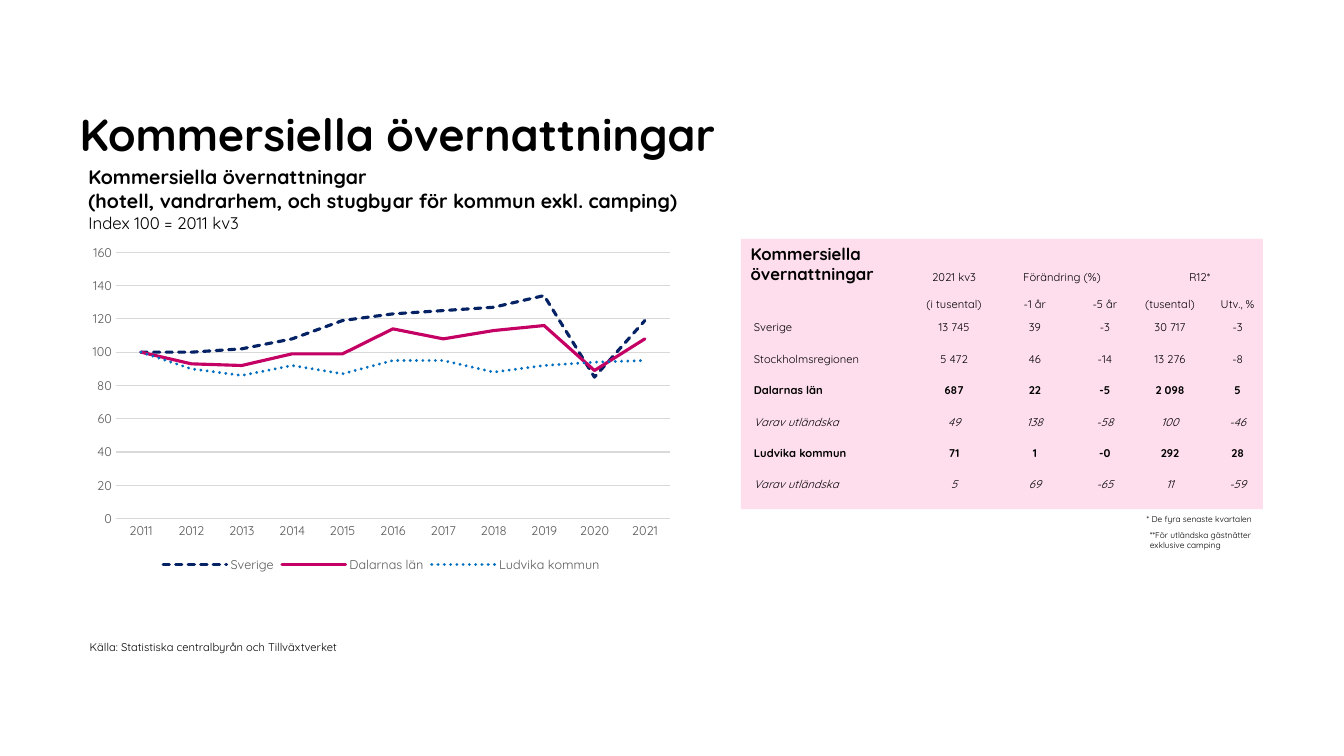
import dataclasses
import typing

import lxml.etree
import pptx
import pptx.chart.data
import pptx.dml.color
import pptx.enum.chart
import pptx.enum.dml
import pptx.enum.shapes
import pptx.enum.text
import pptx.oxml.ns
import pptx.util

Cm = pptx.util.Cm
Pt = pptx.util.Pt
Anchor = pptx.enum.text.MSO_ANCHOR
Align = pptx.enum.text.PP_ALIGN
Dash = pptx.enum.dml.MSO_LINE
Tick = pptx.enum.chart.XL_TICK_MARK


@dataclasses.dataclass(frozen=True)
class Theme:
    face: str = "Quicksand"
    ink: str = "000000"
    gray: str = "595959"
    grid: str = "D9D9D9"
    pink: str = "FEDEED"
    navy: str = "052364"
    red: str = "C40064"
    blue: str = "006EBF"
    title: int = 32
    head: int = 14
    sub: int = 12
    axis: int = 9
    body: int = 8
    note: int = 6


THEME = Theme()


class Line(typing.NamedTuple):
    text: str
    size: int
    bold: bool = False


class Box(typing.NamedTuple):
    left: float
    top: float
    width: float
    height: float
    lines: list[Line]
    inset: bool = True
    anchor: Anchor = Anchor.TOP


class Row(typing.NamedTuple):
    cells: list[str]
    bold: bool = False
    slant: bool = False


class Trend(typing.NamedTuple):
    name: str
    color: str
    dash: Dash
    values: list[int]


BOXES = [
    Box(2.01, 0.94, 23.42, 3.1, [Line("Kommersiella övernattningar", THEME.title, True)],
        False, Anchor.BOTTOM),
    Box(1.98, 4.04, 16.13, 1.96, [
        Line("Kommersiella övernattningar", THEME.head, True),
        Line("(hotell, vandrarhem, och stugbyar för kommun exkl. camping)", THEME.head, True),
        Line("Index 100 = 2011 kv3", THEME.sub)]),
    Box(18.67, 6.02, 6.1, 0.76, [Line("Kommersiella\vövernattningar", THEME.sub, True)]),
    Box(28.65, 12.83, 3.28, 0.51, [Line("* De fyra senaste kvartalen", THEME.note)]),
    Box(28.73, 13.23, 3.15, 0.76,
        [Line("**För utländska gästnätter exklusive camping", THEME.note)]),
    Box(2.01, 16, 7.04, 0.61,
        [Line("Källa: Statistiska centralbyrån och Tillväxtverket", THEME.body)]),
]

HEADS = 2
WIDTHS = [4.29, 1.91, 2.16, 1.37, 1.91, 1.5]
HEIGHTS = [0.66, 0.69] + [0.79] * 6
ROWS = [
    Row(["", "2021 kv3", "Förändring (%)", "", "R12*", ""]),
    Row(["", "(i tusental)", "-1 år", "-5 år", "(tusental)", "Utv., %"]),
    Row(["Sverige", "13 745", "39", "-3", "30 717", "-3"]),
    Row(["Stockholmsregionen", "5 472", "46", "-14", "13 276", "-8"]),
    Row(["Dalarnas län", "687", "22", "-5", "2 098", "5"], bold=True),
    Row(["Varav utländska", "49", "138", "-58", "100", "-46"], slant=True),
    Row(["Ludvika kommun", "71", "1", "-0", "292", "28"], bold=True),
    Row(["Varav utländska", "5", "69", "-65", "11", "-59"], slant=True),
]

TRENDS = [
    Trend("Sverige", THEME.navy, Dash.SQUARE_DOT,
          [100, 100, 102, 108, 119, 123, 125, 127, 134, 85, 119]),
    Trend("Dalarnas län", THEME.red, Dash.SOLID,
          [100, 93, 92, 99, 99, 114, 108, 113, 116, 89, 108]),
    Trend("Ludvika kommun", THEME.blue, Dash.ROUND_DOT,
          [100, 90, 86, 92, 87, 95, 95, 88, 92, 94, 95]),
]


def style(font, size: int, color: str = THEME.ink, bold: bool = False,
          slant: bool = False) -> None:
    font.name, font.size = THEME.face, Pt(size)
    font.bold, font.italic = bold, slant
    font.color.rgb = pptx.dml.color.RGBColor.from_string(color)


def stroke(line, color: str, width: float) -> None:
    line.color.rgb = pptx.dml.color.RGBColor.from_string(color)
    line.width = Pt(width)


def add_box(slide, box: Box) -> None:
    shape = slide.shapes.add_textbox(*map(Cm, box[:4]))
    frame = shape.text_frame
    frame.word_wrap = True
    frame.vertical_anchor = box.anchor
    if not box.inset:
        frame.margin_left = frame.margin_right = frame.margin_top = frame.margin_bottom = 0
    frame.text = "\n".join(line.text for line in box.lines)
    for part, line in zip(frame.paragraphs, box.lines):
        for run in part.runs:
            style(run.font, line.size, bold=line.bold)


def add_panel(slide) -> None:
    panel = slide.shapes.add_shape(pptx.enum.shapes.MSO_SHAPE.RECTANGLE,
                                   Cm(18.67), Cm(6.02), Cm(13.16), Cm(6.81))
    panel.shadow.inherit = False
    panel.fill.solid()
    panel.fill.fore_color.rgb = pptx.dml.color.RGBColor.from_string(THEME.pink)
    panel.line.fill.background()


def fill_cell(cell, text: str, row: Row, label: bool, head: bool) -> None:
    cell.fill.background()
    cell.margin_left = Cm(0.2 if label else 0.03)
    cell.margin_right = cell.margin_top = Cm(0.03)
    cell.margin_bottom = 0
    cell.vertical_anchor = Anchor.BOTTOM if head else Anchor.MIDDLE
    cell.text_frame.text = text
    part = cell.text_frame.paragraphs[0]
    part.alignment = Align.LEFT if label else Align.CENTER
    for run in part.runs:
        style(run.font, THEME.body, bold=row.bold, slant=row.slant)
    if not text:  # keeps blank cells from stretching the row
        end = lxml.etree.SubElement(part._p, pptx.oxml.ns.qn("a:endParaRPr"))
        end.set("sz", str(THEME.body * 100))


def add_grid(slide) -> None:
    table = slide.shapes.add_table(len(ROWS), len(WIDTHS), Cm(18.8), Cm(6.5),
                                   Cm(sum(WIDTHS)), Cm(sum(HEIGHTS))).table
    table.first_row = table.horz_banding = False
    # Plain style without borders
    mark = table._tbl.tblPr.find(pptx.oxml.ns.qn("a:tableStyleId"))
    mark.text = "{2D5ABB26-0587-4C30-8999-92F81FD0307C}"
    for col, width in zip(table.columns, WIDTHS):
        col.width = Cm(width)
    for y, (row, height) in enumerate(zip(ROWS, HEIGHTS)):
        table.rows[y].height = Cm(height)
        for x, text in enumerate(row.cells):
            fill_cell(table.cell(y, x), text, row, x == 0, y < HEADS)
    for x in (2, 4):
        table.cell(0, x).merge(table.cell(0, x + 1))


def add_plot(slide) -> None:
    data = pptx.chart.data.CategoryChartData()
    data.categories = [str(year) for year in range(2011, 2022)]
    for trend in TRENDS:
        data.add_series(trend.name, trend.values)
    chart = slide.shapes.add_chart(pptx.enum.chart.XL_CHART_TYPE.LINE, Cm(2.03), Cm(5.99),
                                   Cm(15.16), Cm(8.53), data).chart
    style(chart.font, THEME.axis, THEME.gray)
    chart.has_title = False
    chart.has_legend = True
    chart.legend.position = pptx.enum.chart.XL_LEGEND_POSITION.BOTTOM
    chart.legend.include_in_layout = False
    style(chart.legend.font, THEME.axis, THEME.gray)
    # Axes
    for axis in (chart.category_axis, chart.value_axis):
        axis.major_tick_mark = axis.minor_tick_mark = Tick.NONE
        style(axis.tick_labels.font, THEME.axis, THEME.gray)
    stroke(chart.category_axis.format.line, THEME.grid, 0.75)
    scale = chart.value_axis
    scale.minimum_scale, scale.maximum_scale, scale.major_unit = 0, 160, 20
    scale.format.line.fill.background()
    stroke(scale.major_gridlines.format.line, THEME.grid, 0.75)
    # Lines
    chart.plots[0].vary_by_categories = False
    for item, trend in zip(chart.plots[0].series, TRENDS):
        item.smooth = False
        item.marker.style = pptx.enum.chart.XL_MARKER_STYLE.NONE
        stroke(item.format.line, trend.color, 2.25)
        item.format.line.dash_style = trend.dash
        for line in item._element.iter(pptx.oxml.ns.qn("a:ln")):
            line.set("cap", "rnd")


def main() -> None:
    deck = pptx.Presentation()
    deck.slide_width, deck.slide_height = Cm(33.87), Cm(19.05)
    slide = deck.slides.add_slide(deck.slide_layouts[6])
    add_panel(slide)
    for box in BOXES:
        add_box(slide, box)
    add_grid(slide)
    add_plot(slide)
    deck.save("out.pptx")


if __name__ == "__main__":
    main()
